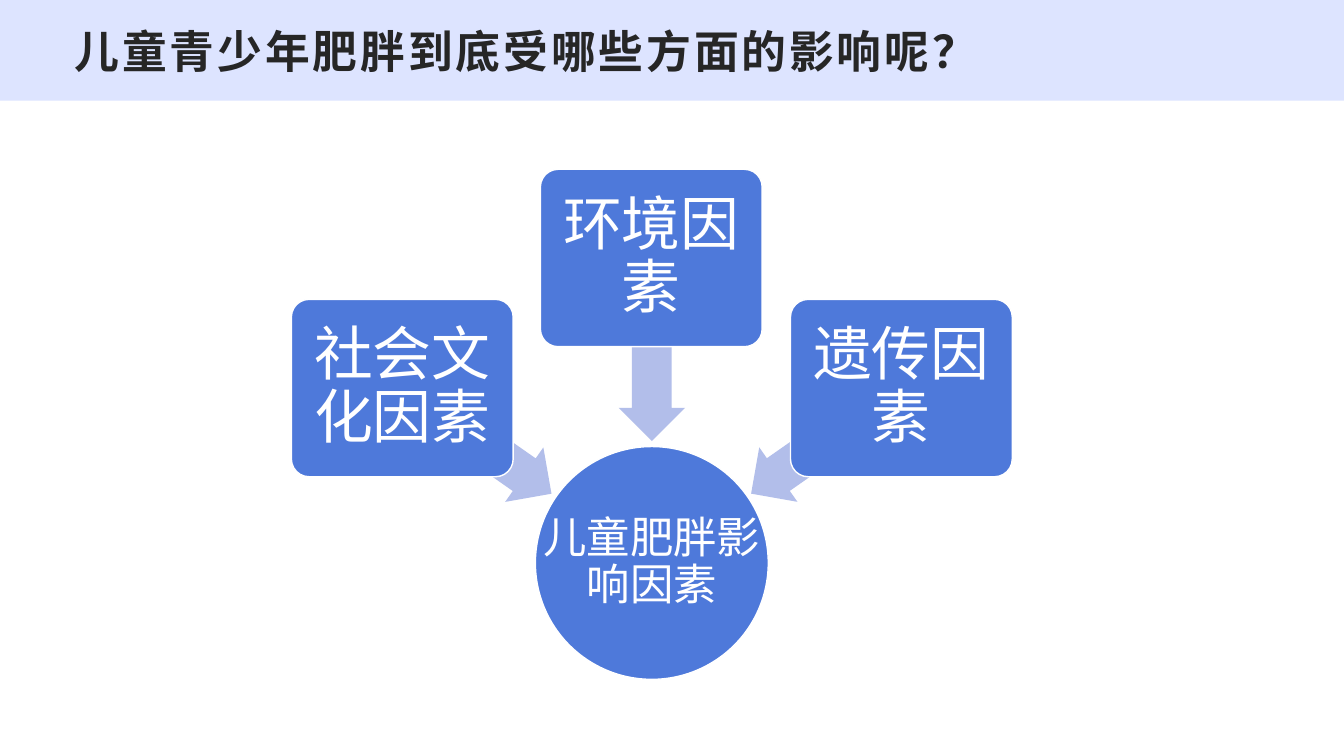
from dataclasses import dataclass

from lxml import etree
from pptx import Presentation
from pptx.dml.color import RGBColor
from pptx.enum import shapes, text
from pptx.oxml import ns
from pptx.util import Inches, Pt

WHITE = RGBColor(0xFF, 0xFF, 0xFF)
BAND = RGBColor(0xDD, 0xE4, 0xFF)
BLUE = RGBColor(0x4E, 0x79, 0xDA)
LAVENDER = RGBColor(0xB2, 0xBE, 0xEA)
DARK = RGBColor(0x26, 0x26, 0x26)

BOX_WIDTH, BOX_HEIGHT = 2.2, 1.76
ARROW_WIDTH, ARROW_HEIGHT = 1.77, 0.66
CIRCLE = (5.31, 4.43, 2.31, 2.31)


@dataclass
class Factor:
    label: str
    left: float
    top: float
    arrow_left: float
    arrow_top: float
    rotation: int


FACTORS = [
    Factor("社会文化因素", 2.89, 2.97, 3.86, 4.06, 215),
    Factor("环境因素", 5.36, 1.68, 5.58, 3.16, 270),
    Factor("遗传因素", 7.84, 2.97, 7.29, 4.06, 325),
]


def add_filled_shape(slide, kind, place: tuple, fill: RGBColor, outlined: bool = False):
    shape = slide.shapes.add_shape(kind, *map(Inches, place))
    shape.shadow.inherit = False
    shape.fill.solid()
    shape.fill.fore_color.rgb = fill
    if outlined:
        shape.line.color.rgb = WHITE
        shape.line.width = Pt(1)
    else:
        shape.line.fill.background()
    return shape


def write_text(shape, words: str, margins: tuple, anchor, alignment,
               color: RGBColor, **font_format) -> None:
    frame = shape.text_frame
    frame.text = words
    left, top, right, bottom = map(Inches, margins)
    frame_format = dict(margin_left=left, margin_top=top, margin_right=right,
                        margin_bottom=bottom, word_wrap=True,
                        auto_size=text.MSO_AUTO_SIZE.NONE, vertical_anchor=anchor)
    for name, value in frame_format.items():
        setattr(frame, name, value)
    paragraph = frame.paragraphs[0]
    paragraph.alignment = alignment
    paragraph.line_spacing = 0.9
    font = paragraph.runs[0].font
    font.color.rgb = color
    for name, value in font_format.items():
        setattr(font, name, value)
    east_asian = etree.SubElement(font._element, ns.qn("a:ea"))
    east_asian.set("typeface", font.name)


def write_label(shape, words: str, margin: float, size: int) -> None:
    write_text(shape, words, (margin,) * 4, text.MSO_ANCHOR.MIDDLE,
               text.PP_ALIGN.CENTER, WHITE, name="Arial", size=Pt(size))


def add_heading(slide) -> None:
    add_filled_shape(slide, shapes.MSO_SHAPE.RECTANGLE, (0, 0, 13.33, 1), BAND)
    title = slide.shapes.title
    title.left, title.top, title.width, title.height = map(
        Inches, (0.63, 0.26, 12.07, 0.48))
    write_text(title, "儿童青少年肥胖到底受哪些方面的影响呢？", (0.11, 0.04, 0.08, 0.04),
               text.MSO_ANCHOR.TOP, text.PP_ALIGN.LEFT, DARK,
               name="Noto Sans CJK SC", size=Pt(32), bold=True)
    title.text_frame.paragraphs[0].runs[0].font._element.set("spc", "200")
    # The title has to lie in front of the band
    title._element.getparent().append(title._element)


def add_circle(slide) -> None:
    add_filled_shape(slide, shapes.MSO_SHAPE.OVAL, CIRCLE, BLUE, outlined=True)
    label = slide.shapes.add_textbox(*map(Inches, CIRCLE))
    write_label(label, "儿童肥胖影响因素", 0.02, 31)


def add_factor(slide, factor: Factor) -> None:
    arrow = add_filled_shape(
        slide, shapes.MSO_SHAPE.LEFT_ARROW,
        (factor.arrow_left, factor.arrow_top, ARROW_WIDTH, ARROW_HEIGHT), LAVENDER)
    arrow.adjustments[0] = 0.6
    arrow.adjustments[1] = 0.5
    arrow.rotation = factor.rotation
    box = add_filled_shape(
        slide, shapes.MSO_SHAPE.ROUNDED_RECTANGLE,
        (factor.left, factor.top, BOX_WIDTH, BOX_HEIGHT), BLUE, outlined=True)
    box.adjustments[0] = 0.1
    write_label(box, factor.label, 0.04, 42)


def main() -> None:
    presentation = Presentation()
    presentation.slide_width = Inches(13.33)
    presentation.slide_height = Inches(7.5)
    slide = presentation.slides.add_slide(presentation.slide_layouts[5])
    add_heading(slide)
    add_circle(slide)
    for factor in FACTORS:
        add_factor(slide, factor)
    presentation.save("out.pptx")


if __name__ == "__main__":
    main()
